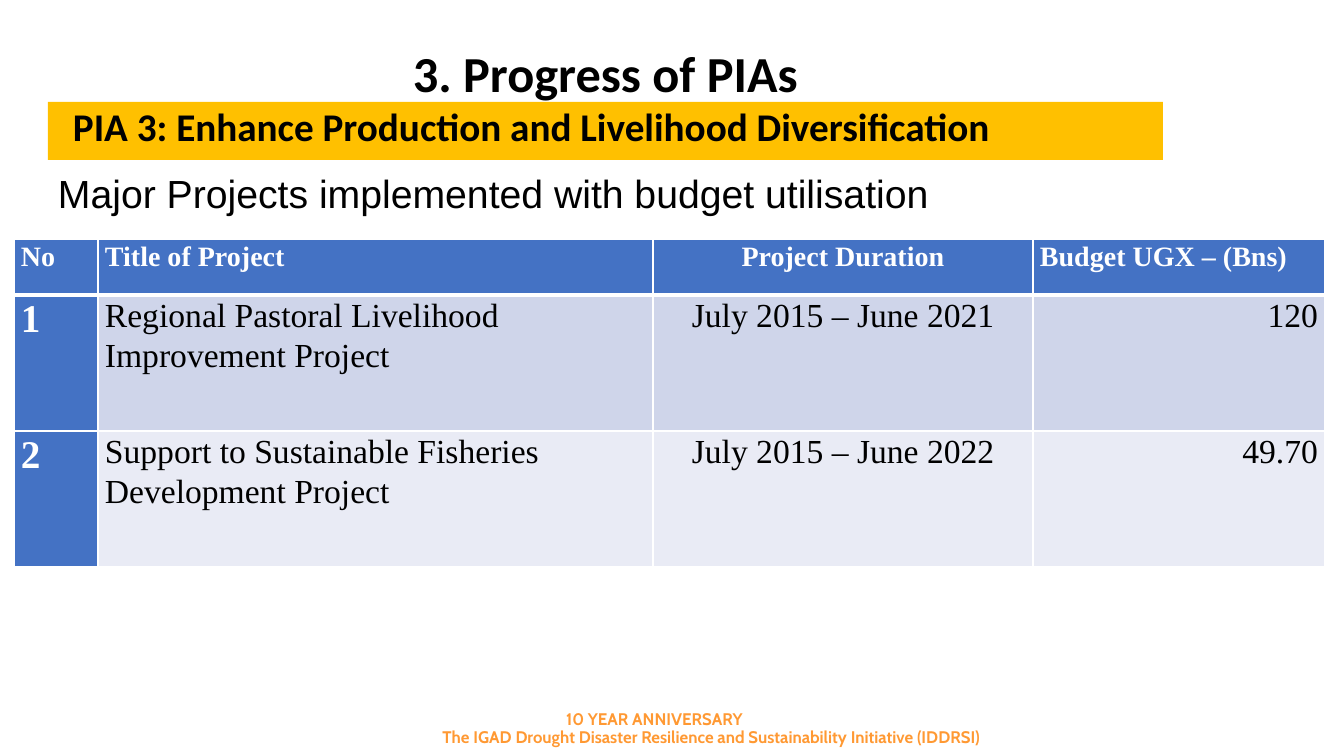
from dataclasses import dataclass
from lxml.etree import SubElement
from pptx import Presentation
from pptx.dml.color import RGBColor
from pptx.enum.shapes import MSO_SHAPE as Shape
from pptx.enum.text import MSO_ANCHOR as Anchor, PP_ALIGN as Align
from pptx.oxml.ns import qn
from pptx.util import Pt

SCALE = 914400 / 100.8
BLACK, WHITE, BLUE, GOLD, AMBER = "000000", "FFFFFF", "4472C4", "FFC000", "FF9933"
SERIF = "Times New Roman"
COLS = (84, 555, 380, 292)
TALL = (56, 136, 136)
BANDS = (BLUE, "CFD5EA", "E9EBF5")
ALIGNS = (Align.LEFT, Align.LEFT, Align.CENTER, Align.RIGHT)
ROWS = (
    ("No", "Title of Project", "Project Duration", "Budget UGX – (Bns)"),
    ("1", "Regional Pastoral Livelihood Improvement Project", "July 2015 – June 2021", "120"),
    ("2", "Support to Sustainable Fisheries Development Project", "July 2015 – June 2022", "49.70"),
)


@dataclass(frozen=True)
class Style:
    font: str
    size: int
    color: str = BLACK
    bold: bool = True


@dataclass(frozen=True)
class Label:
    box: tuple[int, int, int, int]
    text: str
    style: Style
    align: Align = Align.CENTER
    pad: tuple[int, int] = (0, 0)
    fill: str = ""
    indent: int = 0


FOOT = Style("Cabin", 12, AMBER)
LABELS = (
    Label((318, 704, 673, 30), "10 YEAR ANNIVERSARY", FOOT, pad=(10, 5)),
    Label((375, 722, 673, 30),
          "The IGAD Drought Disaster Resilience and Sustainability Initiative (IDDRSI)",
          FOOT, pad=(10, 5)),
    Label((48, 42, 1115, 58), "3. Progress of PIAs", Style("Calibri", 36)),
    Label((48, 102, 1115, 58), "PIA 3: Enhance Production and Livelihood Diversification",
          Style("Calibri", 28), Align.JUSTIFY, fill=GOLD, indent=25),
    Label((48, 164, 1115, 57), "Major Projects implemented with budget utilisation",
          Style("Arial", 28, bold=False), Align.LEFT, (10, 5)),
)


def px(size: int) -> int:
    """Turn px into EMU."""
    return round(size * SCALE)


def tint(code: str) -> RGBColor:
    """Turn a hex string into a colour."""
    return RGBColor.from_string(code)


def write(para, text: str, style: Style, align: Align) -> None:
    """Add one styled run to a paragraph."""
    para.alignment = align
    run = para.add_run()
    run.text = text
    font = run.font
    font.name, font.size, font.bold = style.font, Pt(style.size), style.bold
    font.color.rgb = tint(style.color)


def draw(slide, label: Label) -> None:
    """Draw a label, on a bar if it has a fill."""
    box = tuple(map(px, label.box))
    if label.fill:
        shape = slide.shapes.add_shape(Shape.RECTANGLE, *box)
        shape.shadow.inherit = False
        shape.fill.solid()
        shape.fill.fore_color.rgb = tint(label.fill)
        shape.line.fill.background()
    else:
        shape = slide.shapes.add_textbox(*box)
    frame = shape.text_frame
    frame.word_wrap = True
    frame.vertical_anchor = Anchor.TOP
    frame.margin_left = frame.margin_right = px(label.pad[0])
    frame.margin_top = frame.margin_bottom = px(label.pad[1])
    para = frame.paragraphs[0]
    if label.indent:
        props = para._p.get_or_add_pPr()
        props.set("marL", str(px(label.indent)))
        props.set("indent", "0")
    write(para, label.text, label.style, label.align)


def edge(cell, row: int) -> None:
    """Give a cell white borders, thick under the header."""
    props = cell._tc.get_or_add_tcPr()
    thick = {0: "lnB", 1: "lnT"}.get(row)
    for side in ("lnL", "lnR", "lnT", "lnB"):
        line = SubElement(props, qn(f"a:{side}"), w=str(Pt(3 if side == thick else 1)))
        fill = SubElement(line, qn("a:solidFill"))
        SubElement(fill, qn("a:srgbClr"), val=WHITE)


def pick(row: int, col: int) -> Style:
    """Choose the text style of a cell."""
    if row == 0:
        return Style(SERIF, 20, WHITE)
    if col == 0:
        return Style(SERIF, 28, WHITE)
    return Style(SERIF, 24, bold=False)


def grid(slide) -> None:
    """Draw the table of projects."""
    box = map(px, (14, 239, sum(COLS), sum(TALL)))
    table = slide.shapes.add_table(len(ROWS), len(COLS), *box).table
    for col, width in enumerate(COLS):
        table.columns[col].width = px(width)
    for row, texts in enumerate(ROWS):
        table.rows[row].height = px(TALL[row])
        for col, text in enumerate(texts):
            cell = table.cell(row, col)
            cell.margin_left = cell.margin_right = px(7)
            cell.margin_top = cell.margin_bottom = 0
            edge(cell, row)
            cell.fill.solid()
            cell.fill.fore_color.rgb = tint(BANDS[row] if col else BLUE)
            para = cell.text_frame.paragraphs[0]
            para.line_spacing, para.space_after = 1.07, Pt(8)
            align = Align.LEFT if row == 0 and col == 3 else ALIGNS[col]
            write(para, text, pick(row, col), align)


def main() -> None:
    """Build and save the slide."""
    deck = Presentation()
    deck.slide_width, deck.slide_height = px(1344), px(756)
    slide = deck.slides.add_slide(deck.slide_layouts[6])
    for label in LABELS:
        draw(slide, label)
    grid(slide)
    deck.save("out.pptx")


if __name__ == "__main__":
    main()
